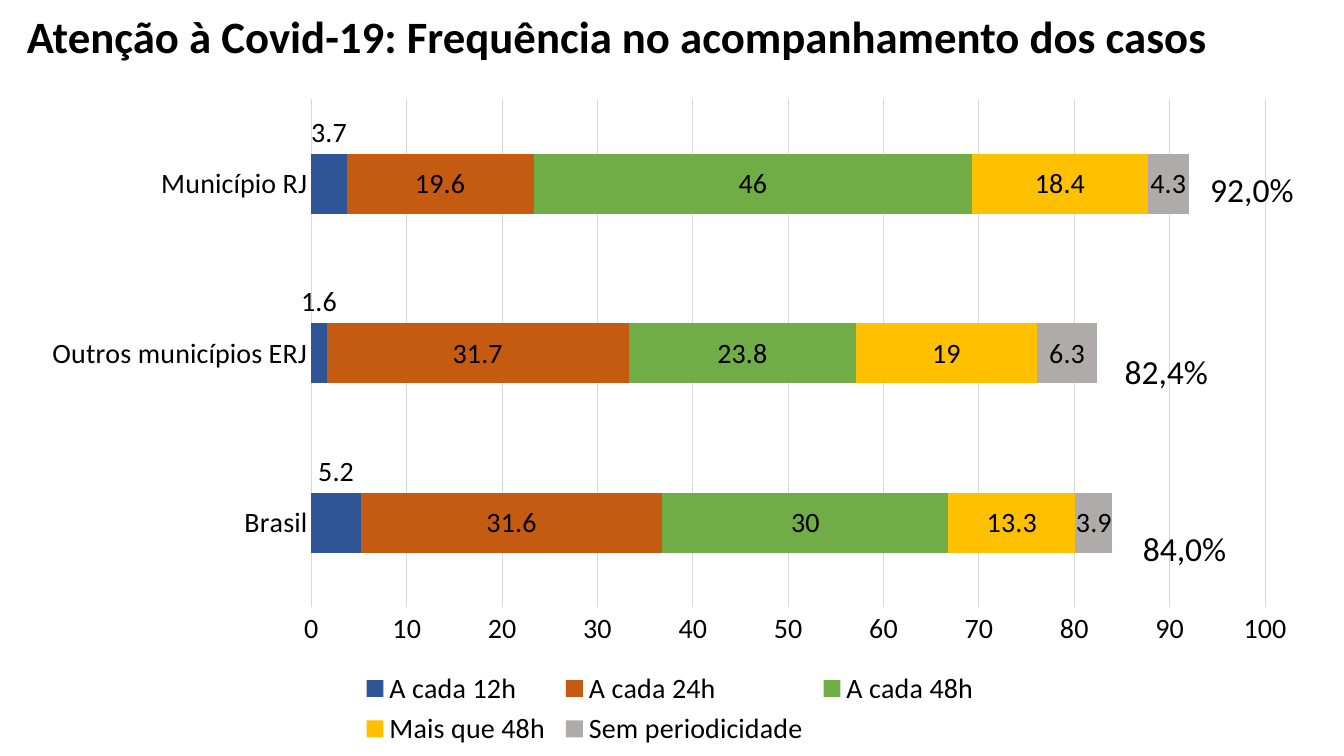
from lxml import etree
from pptx import Presentation
from pptx.chart.data import CategoryChartData
from pptx.dml.color import RGBColor
from pptx.enum.chart import (XL_CHART_TYPE, XL_LABEL_POSITION,
                             XL_LEGEND_POSITION, XL_TICK_MARK)
from pptx.enum.text import MSO_ANCHOR
from pptx.oxml.ns import qn
from pptx.util import Cm, Pt

STACKED = XL_CHART_TYPE.BAR_STACKED
CENTER = XL_LABEL_POSITION.CENTER
BOTTOM = XL_LEGEND_POSITION.BOTTOM
NO_TICK = XL_TICK_MARK.NONE
MIDDLE = MSO_ANCHOR.MIDDLE

BLACK = RGBColor(0x00, 0x00, 0x00)
GRID = RGBColor(0xD9, 0xD9, 0xD9)
BLUE = RGBColor(0x2F, 0x55, 0x97)
ORANGE = RGBColor(0xC5, 0x5A, 0x11)
GREEN = RGBColor(0x70, 0xAD, 0x47)
YELLOW = RGBColor(0xFF, 0xC0, 0x00)
GRAY = RGBColor(0xAF, 0xAB, 0xAB)
FONT = "Calibri"

# Content
TITLE = "Atenção à Covid-19: Frequência no acompanhamento dos casos"
PLACES = ["Brasil", "Outros municípios ERJ", "Município RJ"]
FREQUENCIES = [
    ("A cada 12h", (5.2, 1.6, 3.7), BLUE),
    ("A cada 24h", (31.6, 31.7, 19.6), ORANGE),
    ("A cada 48h", (30, 23.8, 46), GREEN),
    ("Mais que 48h", (13.3, 19, 18.4), YELLOW),
    ("Sem periodicidade", (3.9, 6.3, 4.3), GRAY),
]
TOTALS = [  # text, left, top in cm
    ("92,0%", 30.25, 4.14),
    ("82,4%", 28.09, 8.71),
    ("84,0%", 28.55, 13.18),
]

# Layout: chart parts as fractions of the chart frame
PLOT_AREA = {"layoutTarget": "inner", "xMode": "edge", "yMode": "edge",
             "x": 0.221, "y": 0.02, "w": 0.742, "h": 0.763}
LEGEND_AREA = {"xMode": "edge", "yMode": "edge",
               "x": 0.255, "y": 0.87, "w": 0.49, "h": 0.13}
LABEL_ABOVE_BAR = {"x": 0, "y": -0.077}


def style(font, size, bold=False):
    font.name, font.size, font.bold = FONT, Pt(size), bold
    font.color.rgb = BLACK


def place(element, settings, after=None):
    """Give a chart element a manual layout, after a child or first."""
    for old in element.findall(qn("c:layout")):
        element.remove(old)
    layout = etree.Element(qn("c:layout"))
    manual = etree.SubElement(layout, qn("c:manualLayout"))
    for tag, value in settings.items():
        etree.SubElement(manual, qn("c:" + tag)).set("val", str(value))
    element.insert(0, layout)
    if after:
        element.find(qn(after)).addnext(layout)


def add_text(slide, text, box, size, bold=False, wrap=False):
    frame = slide.shapes.add_textbox(*(Cm(n) for n in box)).text_frame
    frame.text = text
    frame.word_wrap = wrap
    style(frame.paragraphs[0].runs[0].font, size, bold)
    return frame


prs = Presentation()
prs.slide_width, prs.slide_height = Cm(33.87), Cm(19.05)
slide = prs.slides.add_slide(prs.slide_layouts[6])

# Title
heading = add_text(slide, TITLE, (0.43, -0.86, 32.61, 3.68), 32, True, True)
heading.vertical_anchor = MIDDLE
heading.paragraphs[0].line_spacing = 0.9

# Stacked bars
data = CategoryChartData()
data.categories = PLACES
for name, values, _ in FREQUENCIES:
    data.add_series(name, values)
chart = slide.shapes.add_chart(
    STACKED, Cm(0.69), Cm(2.16), Cm(32.39), Cm(16.79), data).chart
style(chart.font, 20)
chart.has_title = False
plot = chart.plots[0]
plot.gap_width, plot.overlap = 182, 100
plot.vary_by_categories = False
for series, (_, _, color) in zip(plot.series, FREQUENCIES):
    series.format.fill.solid()
    series.format.fill.fore_color.rgb = color
    labels = series.data_labels
    labels.show_value = True
    labels.position = CENTER
    style(labels.font, 20)

# Labels of the narrow first bars sit above them
first = plot.series[0]
for index in range(len(PLACES)):
    label = first.points[index].data_label
    label.position = CENTER
    style(label.font, 20)
for element in first._element.iter(qn("c:dLbl")):
    place(element, LABEL_ABOVE_BAR, "c:idx")

# No leader lines between labels and bars
for leader in chart._chartSpace.iter(qn("c:showLeaderLines")):
    leader.set("val", "0")

# Axes
places, percent = chart.category_axis, chart.value_axis
for axis in (places, percent):
    axis.major_tick_mark = axis.minor_tick_mark = NO_TICK
    style(axis.tick_labels.font, 20)
percent.minimum_scale, percent.maximum_scale = 0, 100
percent.major_unit = 10
percent.has_major_gridlines = True
percent.format.line.fill.background()
for line in (places.format.line, percent.major_gridlines.format.line):
    line.color.rgb = GRID
    line.width = Pt(0.75)

# Legend and plot area
chart.has_legend = True
legend = chart.legend
legend.position = BOTTOM
legend.include_in_layout = False
style(legend.font, 20)
place(legend._element, LEGEND_AREA, "c:legendPos")
place(chart._chartSpace.find(".//" + qn("c:plotArea")), PLOT_AREA)

# Totals beside the bars
for total, left, top in TOTALS:
    add_text(slide, total, (left, top, 2.82, 1.27), 24)

prs.save("out.pptx")
